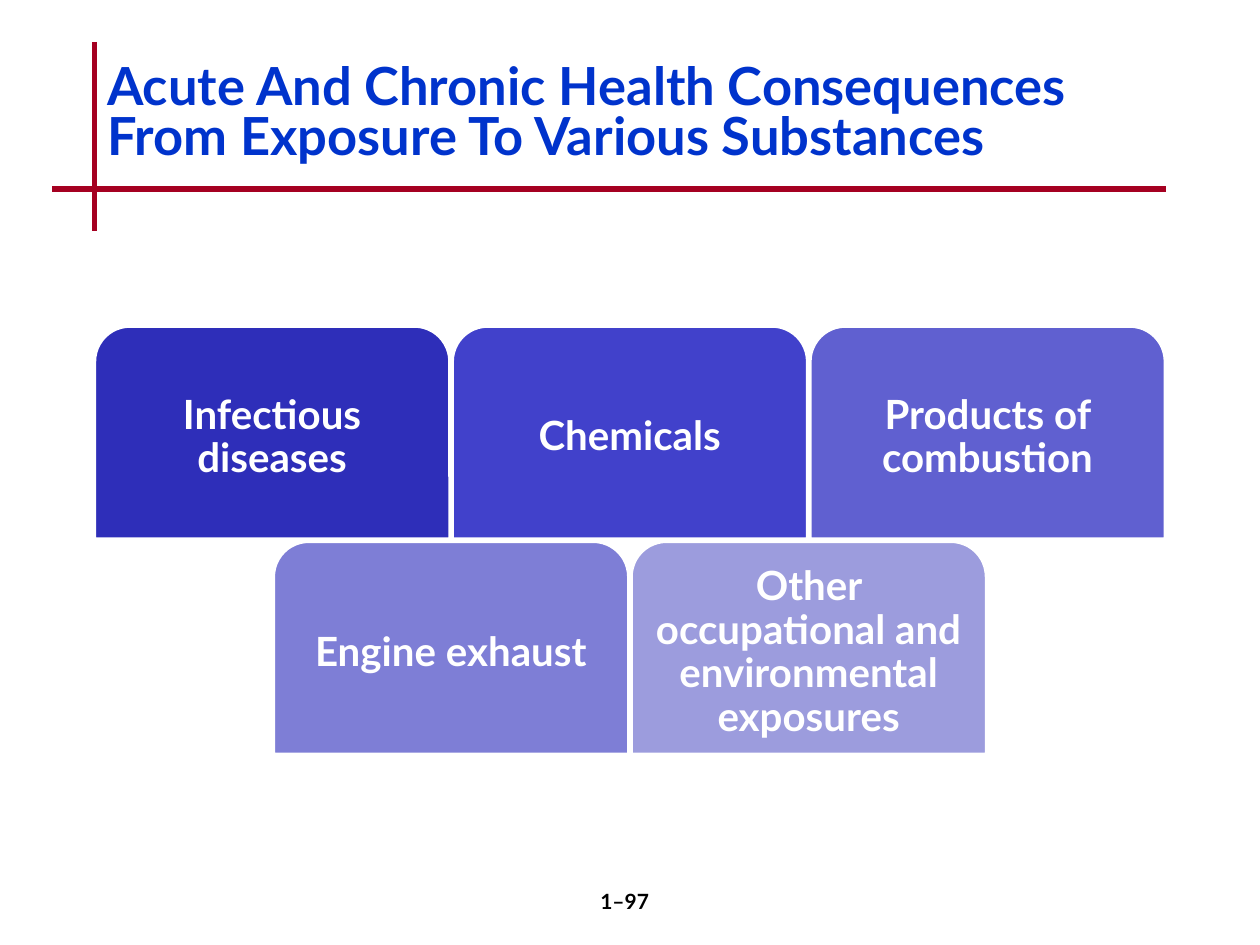
from lxml import etree
from pptx import Presentation
from pptx.dml.color import RGBColor
from pptx.enum import shapes, text
from pptx.oxml.ns import qn
from pptx.util import Pt

COLORS = {"rule": "A50021", "title": "0033CC", "page": "000000", "white": "FFFFFF"}
SUBSTANCE_ROWS = [
    [("Infectious diseases", "2E2EB9"), ("Chemicals", "4141CB"),
     ("Products of combustion", "6060D0")],
    [("Engine exhaust", "7E7ED6"),
     ("Other occupational and environmental exposures", "9C9CDD")],
]
CARD_WIDTH, CARD_HEIGHT, GAP = 203.2, 121.8, 1.2
CENTER, ROWS_TOP = 360, 186.3


def rgb(value):
    return RGBColor.from_string(value)


def write(frame, wording, size, color, frame_format, paragraph_format):
    frame.text = wording
    frame.word_wrap = True
    paragraph = frame.paragraphs[0]
    font_format = {"name": "Lato", "size": Pt(size), "bold": True}
    for target, values in ((frame, frame_format), (paragraph, paragraph_format),
                           (paragraph.runs[0].font, font_format)):
        for name, value in values.items():
            setattr(target, name, value)
    paragraph.runs[0].font.color.rgb = rgb(color)


def add_rule(slide, *ends):
    rule = slide.shapes.add_connector(shapes.MSO_CONNECTOR.STRAIGHT, *map(Pt, ends))
    rule.line.color.rgb = rgb(COLORS["rule"])
    rule.line.width = Pt(3)
    etree.SubElement(rule._element.spPr, qn("a:effectLst"))


def set_title(slide, wording):
    title = slide.shapes.title
    title.left, title.top, title.width, title.height = map(Pt, (54, 24, 612, 84))
    write(title.text_frame, wording, 30, COLORS["title"],
          {"vertical_anchor": text.MSO_ANCHOR.MIDDLE, "auto_size": text.MSO_AUTO_SIZE.NONE},
          {"alignment": text.PP_ALIGN.LEFT, "line_spacing": 0.8})


def add_page_number(slide, wording):
    box = slide.shapes.add_textbox(*map(Pt, (282, 504, 150, 36)))
    write(box.text_frame, wording, 12, COLORS["page"], {},
          {"alignment": text.PP_ALIGN.CENTER})


def add_card(slide, wording, fill, left, top):
    card = slide.shapes.add_shape(shapes.MSO_SHAPE.ROUND_2_SAME_RECTANGLE,
                                  *map(Pt, (left, top, CARD_WIDTH, CARD_HEIGHT)))
    card.shadow.inherit = False
    card.fill.solid()
    card.fill.fore_color.rgb = rgb(fill)
    card.line.color.rgb = rgb(COLORS["white"])
    card.line.width = Pt(2)
    margins = {f"margin_{side}": Pt(7.2) for side in ("left", "top", "right", "bottom")}
    write(card.text_frame, wording, 23, COLORS["white"],
          {"vertical_anchor": text.MSO_ANCHOR.MIDDLE, **margins},
          {"alignment": text.PP_ALIGN.CENTER, "line_spacing": 0.9})


def add_card_rows(slide):
    """Centre each row of cards on the slide."""
    for row, cards in enumerate(SUBSTANCE_ROWS):
        row_width = len(cards) * (CARD_WIDTH + GAP) - GAP
        top = ROWS_TOP + row * (CARD_HEIGHT + GAP)
        for column, (wording, fill) in enumerate(cards):
            left = CENTER - row_width / 2 + column * (CARD_WIDTH + GAP)
            add_card(slide, wording, fill, left, top)


def main():
    deck = Presentation()
    deck.slide_width, deck.slide_height = Pt(720), Pt(540)
    slide = deck.slides.add_slide(deck.slide_layouts[5])
    add_rule(slide, 54, 24, 54, 132)
    add_rule(slide, 30, 108, 666, 108)
    set_title(slide, "Acute And Chronic Health Consequences "
                     "From Exposure To Various Substances")
    add_card_rows(slide)
    add_page_number(slide, "1–97")
    deck.save("out.pptx")


if __name__ == "__main__":
    main()
